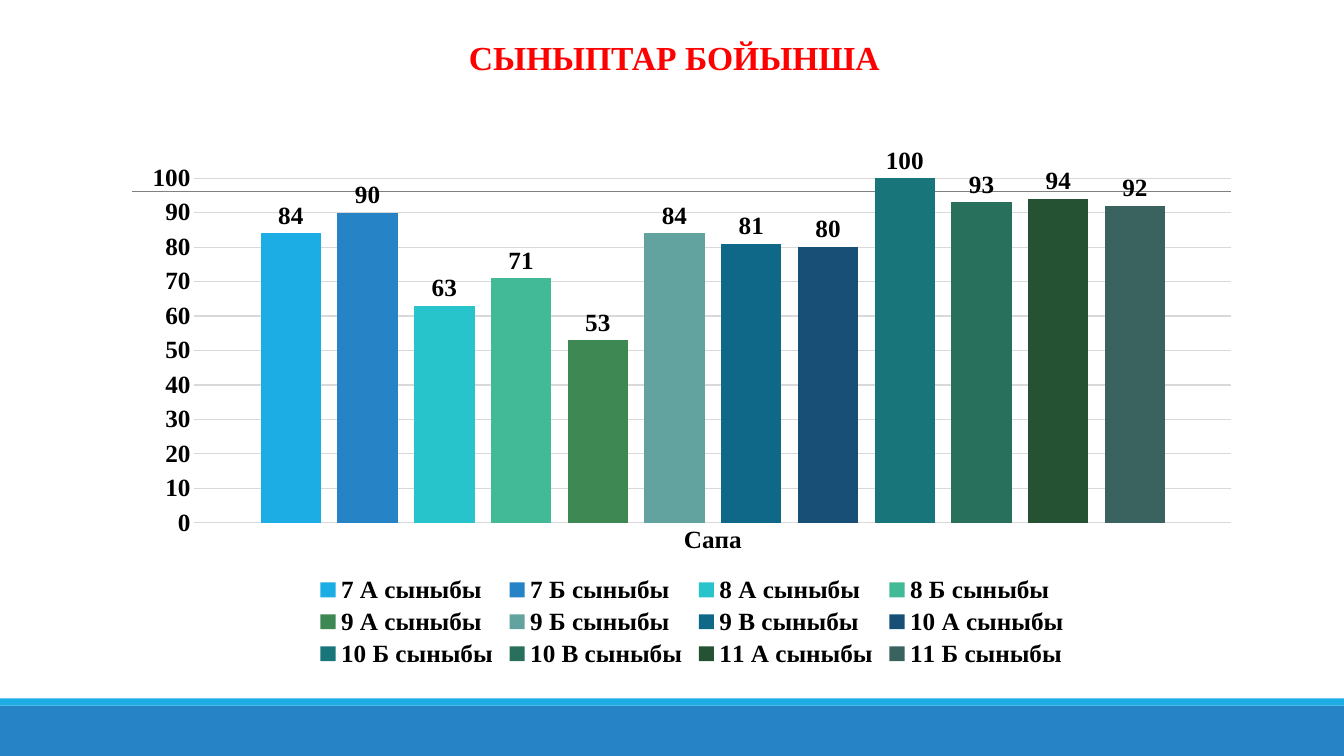
from lxml import etree
from pptx import Presentation
from pptx.chart.data import CategoryChartData
from pptx.dml.color import RGBColor
from pptx.enum import chart as ch, shapes, text
from pptx.oxml.ns import qn
from pptx.util import Cm, Pt

FONT = "Times New Roman"
BLACK = RGBColor(0x00, 0x00, 0x00)
RED = RGBColor(0xFF, 0x00, 0x00)
GRAY = RGBColor(0x80, 0x80, 0x80)
LIGHT_GRAY = RGBColor(0xD9, 0xD9, 0xD9)
BLUE = RGBColor(0x26, 0x83, 0xC6)
SKY = RGBColor(0x1C, 0xAD, 0xE4)

CATEGORY = "Сапа"
CLASSES = [
    ("7 А сыныбы", 84, SKY),
    ("7 Б сыныбы", 90, BLUE),
    ("8 А сыныбы", 63, RGBColor(0x28, 0xC4, 0xCC)),
    ("8 Б сыныбы", 71, RGBColor(0x42, 0xBA, 0x97)),
    ("9 А сыныбы", 53, RGBColor(0x3E, 0x88, 0x53)),
    ("9 Б сыныбы", 84, RGBColor(0x62, 0xA3, 0x9F)),
    ("9 В сыныбы", 81, RGBColor(0x10, 0x68, 0x89)),
    ("10 А сыныбы", 80, RGBColor(0x17, 0x4F, 0x77)),
    ("10 Б сыныбы", 100, RGBColor(0x18, 0x76, 0x7A)),
    ("10 В сыныбы", 93, RGBColor(0x28, 0x70, 0x5B)),
    ("11 А сыныбы", 94, RGBColor(0x25, 0x52, 0x32)),
    ("11 Б сыныбы", 92, RGBColor(0x3A, 0x63, 0x60)),
]


def set_font(font, size=18, color=BLACK, bold=True):
    font.name = FONT
    font.size = Pt(size)
    font.bold = bold
    font.color.rgb = color


def set_line(line, color, width=0.75):
    line.color.rgb = color
    line.width = Pt(width)


def add_band(slide, top, height, color):
    sp = slide.shapes.add_shape(
        shapes.MSO_SHAPE.RECTANGLE, 0, top, Cm(33.87), height)
    sp.shadow.inherit = False
    sp.fill.solid()
    sp.fill.fore_color.rgb = color
    sp.line.fill.background()


def add_rule(slide, left, right, y):
    line = slide.shapes.add_connector(
        shapes.MSO_CONNECTOR.STRAIGHT, left, y, right, y)
    set_line(line.line, GRAY, 0.5)
    etree.SubElement(line._element.spPr, qn("a:effectLst"))


def fill_title(sp, content, **fmt):
    sp.left, sp.top, sp.width, sp.height = Cm(11.56), Cm(0.79), Cm(14.6), Cm(1.28)
    tf = sp.text_frame
    tf.word_wrap = True
    tf.vertical_anchor = text.MSO_ANCHOR.TOP
    p = tf.paragraphs[0]
    p.alignment = text.PP_ALIGN.LEFT
    r = p.add_run()
    r.text = content
    set_font(r.font, **fmt)


def style_axes(chart):
    for axis in (chart.category_axis, chart.value_axis):
        axis.major_tick_mark = axis.minor_tick_mark = ch.XL_TICK_MARK.NONE
        set_font(axis.tick_labels.font)
    set_line(chart.category_axis.format.line, LIGHT_GRAY)
    values = chart.value_axis
    values.minimum_scale, values.maximum_scale, values.major_unit = 0, 100, 10
    values.format.line.fill.background()
    set_line(values.major_gridlines.format.line, LIGHT_GRAY)


def add_class_chart(slide):
    data = CategoryChartData()
    data.categories = [CATEGORY]
    for name, value, _ in CLASSES:
        data.add_series(name, [value])
    chart = slide.shapes.add_chart(
        ch.XL_CHART_TYPE.COLUMN_CLUSTERED,
        Cm(3.28), Cm(3.71), Cm(28.32), Cm(13.23), data).chart
    set_font(chart.font)
    chart.has_title = False
    chart.has_legend = True
    chart.legend.position = ch.XL_LEGEND_POSITION.BOTTOM
    chart.legend.include_in_layout = False
    set_font(chart.legend.font)
    style_axes(chart)

    plot = chart.plots[0]
    plot.vary_by_categories = False
    plot.gap_width, plot.overlap = 219, -27
    for series, (_, _, color) in zip(plot.series, CLASSES):
        series.format.fill.solid()
        series.format.fill.fore_color.rgb = color
        labels = series.data_labels
        labels.show_value = True
        labels.position = ch.XL_LABEL_POSITION.OUTSIDE_END
        set_font(labels.font)


def main():
    prs = Presentation()
    prs.slide_width, prs.slide_height = Cm(33.87), Cm(19.05)
    slide = prs.slides.add_slide(prs.slide_layouts[5])
    add_band(slide, Cm(17.78), Cm(1.27), BLUE)
    add_band(slide, Cm(17.6), Cm(0.18), SKY)
    add_rule(slide, Cm(3.33), Cm(31.01), Cm(4.83))
    fill_title(slide.shapes.title, "СЫНЫПТАР БОЙЫНША", size=24, color=RED)
    add_class_chart(slide)
    prs.save("out.pptx")


if __name__ == "__main__":
    main()
